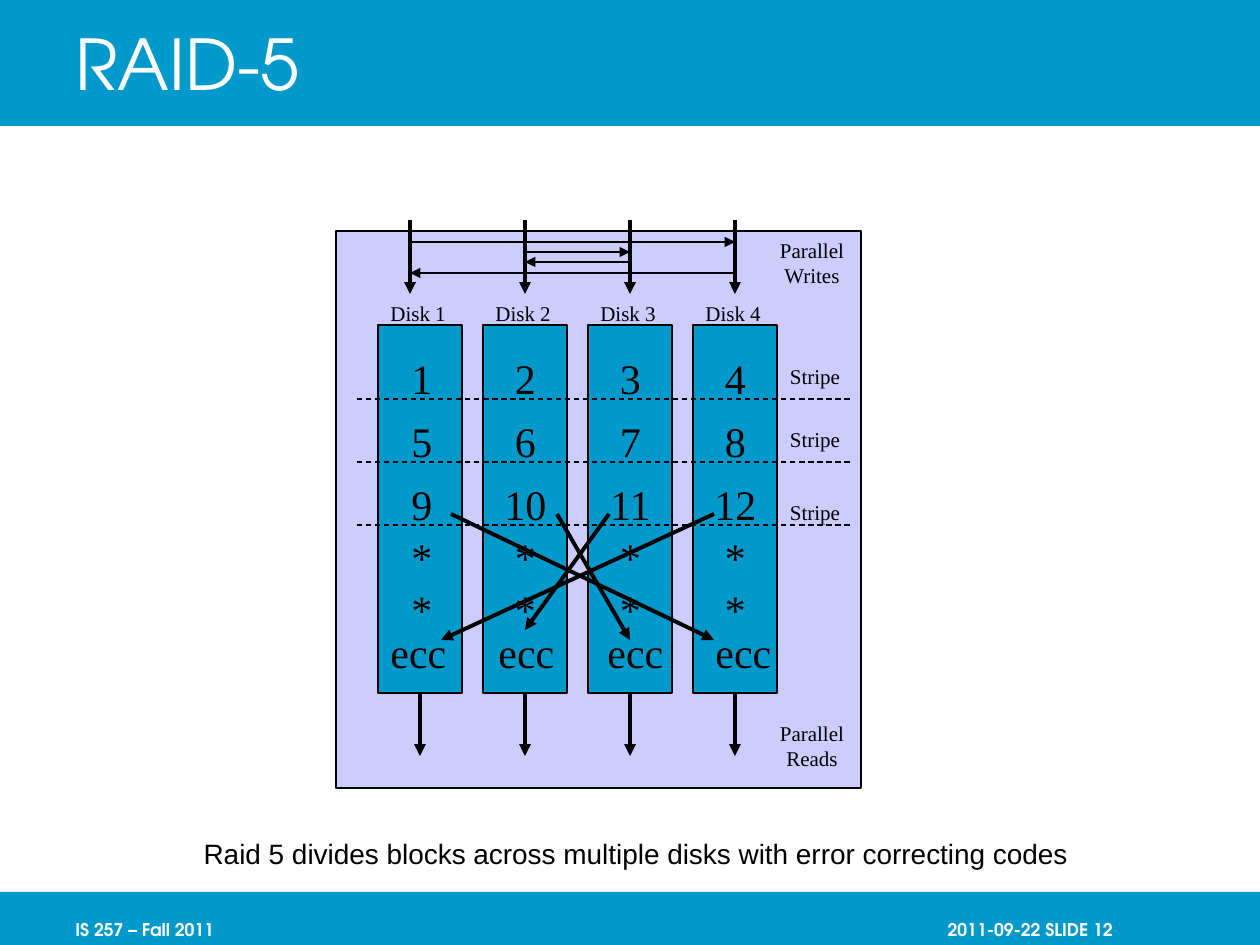
"""Build the RAID-5 slide: four striped disks with parallel writes, reads and ecc."""
from lxml.etree import SubElement
from pptx import Presentation
from pptx.dml.color import RGBColor
from pptx.enum.dml import MSO_LINE
from pptx.enum.shapes import MSO_CONNECTOR, MSO_SHAPE
from pptx.enum.text import MSO_ANCHOR, PP_ALIGN
from pptx.oxml.ns import qn
from pptx.util import Pt

SCALE = 914400 / 126
COLORS = {"blue": "0099CC", "lilac": "CCCCFF", "black": "000000", "white": "FFFFFF"}
FORMATS = {
    "title": {"name": "TeX Gyre Adventor", "size": Pt(40), "color": "white"},
    "footer": {"name": "TeX Gyre Adventor", "size": Pt(10), "bold": True, "color": "white"},
    "label": {"name": "Times New Roman", "size": Pt(12), "color": "black"},
    "block": {"name": "Times New Roman", "size": Pt(24), "color": "black"},
    "caption": {"name": "Arial", "size": Pt(16), "color": "black"},
}
LEFT, CENTER, RIGHT = PP_ALIGN.LEFT, PP_ALIGN.CENTER, PP_ALIGN.RIGHT

DISKS = ["Disk 1", "Disk 2", "Disk 3", "Disk 4"]
DISK_LEFT, DISK_STEP, DISK_TOP, DISK_WIDTH, DISK_HEIGHT = 378, 105, 325, 84, 368
BLOCK_ROWS = [
    (346, ["1", "2", "3", "4"]),
    (409, ["5", "6", "7", "8"]),
    (472, ["9", "10", "11", "12"]),
    (525, ["*"] * 4),
    (577, ["*"] * 4),
]
ECC_TOP, ECC_ROW = 620, ["ecc"] * 4
BLOCK_TABS, ECC_TABS = [114, 219, 324], [136, 245, 353]
WRITE_COLUMNS, READ_COLUMNS = [410, 525, 630, 735], [420, 525, 630, 735]
STRIPE_LINES = [399, 462, 525]
SIDE_LABELS = [
    (767, 231, 90, 63, ["Parallel", "Writes"]),
    (767, 714, 90, 63, ["Parallel", "Reads"]),
    (777, 357, 76, 38, ["Stripe"]),
    (777, 420, 76, 38, ["Stripe"]),
    (777, 493, 76, 38, ["Stripe"]),
]
EXCHANGES = [(410, 242, 735, 242), (735, 273, 410, 273), (525, 252, 630, 252), (630, 262, 525, 262)]
ECC_ARROWS = [(451, 514, 714, 640), (714, 514, 441, 640), (557, 514, 630, 640), (609, 514, 525, 630)]


def emu(*lengths):
    return [round(length * SCALE) for length in lengths]


def color(name):
    return RGBColor.from_string(COLORS[name])


def add_box(slide, area, fill, outlined=True):
    shape = slide.shapes.add_shape(MSO_SHAPE.RECTANGLE, *emu(*area))
    shape.shadow.inherit = False
    shape.fill.solid()
    shape.fill.fore_color.rgb = color(fill)
    if outlined:
        shape.line.color.rgb = color("black")
        shape.line.width = Pt(0.75)
    else:
        shape.line.fill.background()


def add_text(slide, area, lines, style, align=LEFT, anchor=MSO_ANCHOR.TOP, tabs=()):
    frame = slide.shapes.add_textbox(*emu(*area)).text_frame
    frame.word_wrap = True
    frame.vertical_anchor = anchor
    for index, line in enumerate(lines):
        paragraph = frame.paragraphs[0] if index == 0 else frame.add_paragraph()
        paragraph.alignment = align
        if tabs:
            tab_list = SubElement(paragraph._p.get_or_add_pPr(), qn("a:tabLst"))
            for position in emu(*tabs):
                SubElement(tab_list, qn("a:tab"), pos=str(position), algn="ctr")
        run = paragraph.add_run()
        run.text = line
        for attribute, value in FORMATS[style].items():
            if attribute == "color":
                run.font.color.rgb = color(value)
            else:
                setattr(run.font, attribute, value)


def add_line(slide, ends, width, arrow=True):
    connector = slide.shapes.add_connector(MSO_CONNECTOR.STRAIGHT, *emu(*ends))
    connector.line.color.rgb = color("black")
    connector.line.width = Pt(width)
    if arrow:
        SubElement(connector.line._get_or_add_ln(), qn("a:tailEnd"), type="triangle")
    else:
        connector.line.dash_style = MSO_LINE.DASH
    SubElement(connector._element.spPr, qn("a:effectLst"))


def add_frame(slide):
    middle = MSO_ANCHOR.MIDDLE
    add_box(slide, (0, 0, 1260, 126), "blue", outlined=False)
    add_box(slide, (0, 892, 1260, 53), "blue", outlined=False)
    add_text(slide, (63, 0, 1071, 126), ["RAID-5"], "title", anchor=middle)
    add_text(slide, (63, 914, 262, 31), ["IS 257 – Fall 2011"], "footer", anchor=middle)
    add_text(slide, (863, 914, 262, 31), ["2011-09-22 SLIDE 12"], "footer", RIGHT, middle)
    caption = "Raid 5 divides blocks across multiple disks with error correcting codes"
    add_text(slide, (190, 830, 892, 47), [caption], "caption", CENTER)


def add_diagram(slide):
    add_box(slide, (336, 231, 525, 557), "lilac")
    for index, name in enumerate(DISKS):
        left = DISK_LEFT + index * DISK_STEP
        add_box(slide, (left, DISK_TOP, DISK_WIDTH, DISK_HEIGHT), "blue")
        add_text(slide, (left, 294, DISK_WIDTH, 38), [name], "label")
    for top, blocks in BLOCK_ROWS:
        add_text(slide, (399, top, 400, 63), ["\t".join(blocks)], "block", tabs=BLOCK_TABS)
    add_text(slide, (378, ECC_TOP, 425, 63), ["\t".join(ECC_ROW)], "block", tabs=ECC_TABS)
    for left, top, width, height, lines in SIDE_LABELS:
        add_text(slide, (left, top, width, height), lines, "label", CENTER)
    for y in STRIPE_LINES:
        add_line(slide, (357, y, 850, y), 0.75, arrow=False)
    writes = [(x, 220, x, 294) for x in WRITE_COLUMNS]
    reads = [(x, DISK_TOP + DISK_HEIGHT, x, 756) for x in READ_COLUMNS]
    for ends in writes + reads + ECC_ARROWS:
        add_line(slide, ends, 2.25)
    for ends in EXCHANGES:
        add_line(slide, ends, 0.75)


def main():
    presentation = Presentation()
    presentation.slide_width, presentation.slide_height = emu(1260, 945)
    slide = presentation.slides.add_slide(presentation.slide_layouts[6])
    add_frame(slide)
    add_diagram(slide)
    presentation.save("out.pptx")


if __name__ == "__main__":
    main()
